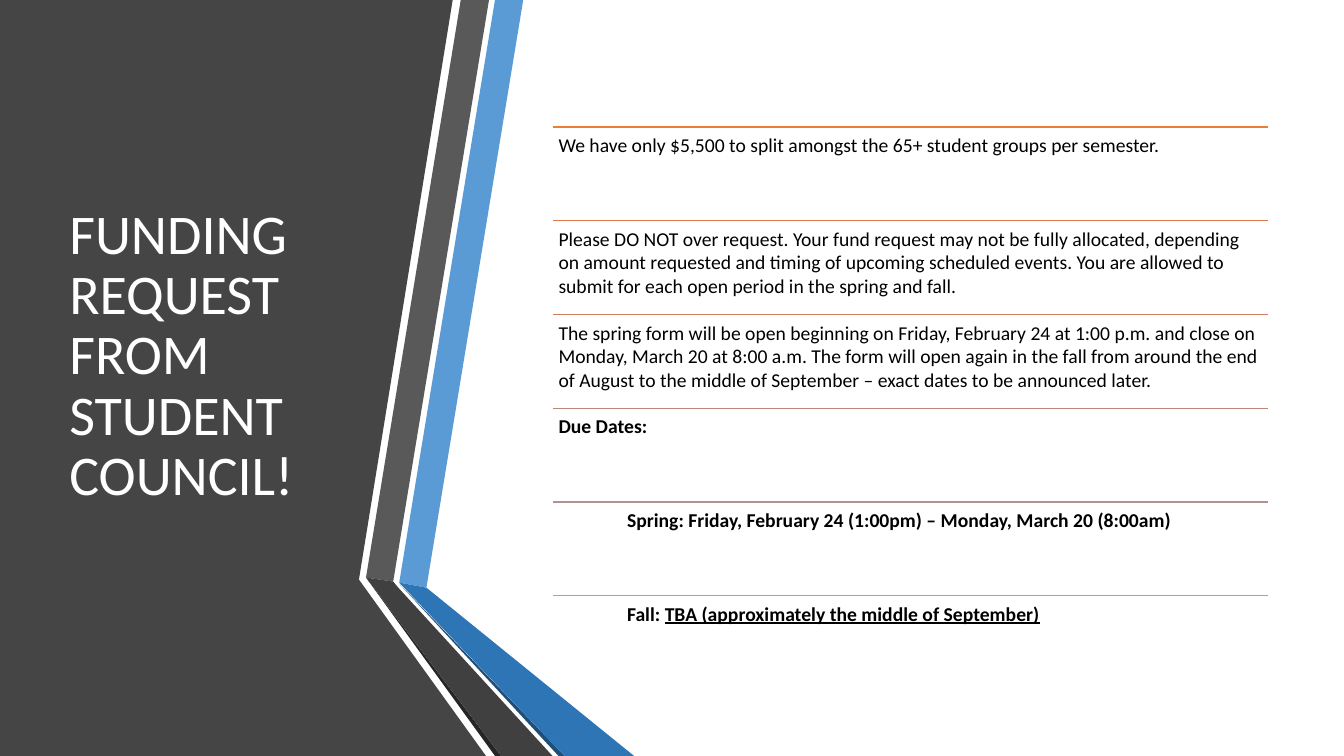
"""Build the student council funding request slide."""
from dataclasses import dataclass

from lxml import etree
from pptx import Presentation
from pptx.dml.color import RGBColor
from pptx.enum.shapes import MSO_CONNECTOR
from pptx.enum.text import MSO_ANCHOR
from pptx.oxml.ns import qn
from pptx.slide import Slide
from pptx.util import Inches, Pt

STRAIGHT = MSO_CONNECTOR.STRAIGHT
TOP, MIDDLE = MSO_ANCHOR.TOP, MSO_ANCHOR.MIDDLE

FONT = "Calibri"
COLORS = {
    "panel": "454545",
    "blue": "5B9BD5",
    "blue_fold": "2E75B6",
    "blue_shade": "1F4E79",
    "gray": "595959",
    "gray_fold": "404040",
    "gray_shade": "262626",
    "title": "FFFFFF",
    "body": "000000",
}
ROW_LEFT, ROW_TOP, ROW_WIDTH, ROW_HEIGHT = 5.48, 1.26, 7.1, 0.93
TAB_STOP = 0.68


@dataclass(frozen=True)
class Band:
    color: str
    points: tuple[tuple[float, float], ...]


@dataclass(frozen=True)
class Phrase:
    text: str
    bold: bool = False
    underline: bool = False


@dataclass(frozen=True)
class Row:
    rule_color: str
    phrases: tuple[Phrase, ...]


BANDS = (
    Band("panel", ((0, 0), (4.49, 0), (3.56, 5.75), (4.82, 7.5), (0, 7.5))),
    Band("blue", ((3.96, 5.78), (4.23, 5.83), (5.19, 0), (4.91, 0))),
    Band("gray", ((4.85, 0), (4.57, 0), (3.63, 5.73), (3.9, 5.77))),
    Band("gray_shade", ((3.63, 5.73), (4.91, 7.5), (4.97, 7.5))),
    Band("blue_shade", ((3.96, 5.79), (5.54, 7.5), (5.6, 7.5))),
    Band("blue_fold", ((3.96, 5.78), (5.6, 7.5), (6.29, 7.5), (4.23, 5.83))),
    Band("gray_fold", ((5.48, 7.5), (3.95, 5.83), (3.9, 5.77), (3.63, 5.73), (4.97, 7.5))),
)

ROWS = (
    Row("ED7D31", (Phrase(
        "We have only $5,500 to split amongst the 65+ student groups per semester."),)),
    Row("DC7A4B", (Phrase(
        "Please DO NOT over request. Your fund request may not be fully allocated, "
        "depending on amount requested and timing of upcoming scheduled events. "
        "You are allowed to submit for each open period in the spring and fall."),)),
    Row("CC7D64", (Phrase(
        "The spring form will be open beginning on Friday, February 24 at 1:00 p.m. "
        "and close on Monday, March 20 at 8:00 a.m. The form will open again in the "
        "fall from around the end of August to the middle of September – exact dates "
        "to be announced later."),)),
    Row("BD867B", (Phrase("Due Dates:", bold=True),)),
    Row("B09391", (Phrase(
        "\tSpring: Friday, February 24 (1:00pm) – Monday, March 20 (8:00am)", bold=True),)),
    Row("A5A5A5", (
        Phrase("\tFall: ", bold=True),
        Phrase("TBA (approximately the middle of September)", bold=True, underline=True))),
)


def add_band(slide: Slide, band: Band) -> None:
    start, *rest = [(Inches(x), Inches(y)) for x, y in band.points]
    builder = slide.shapes.build_freeform(*start)
    builder.add_line_segments(rest, close=True)
    outline = builder.convert_to_shape()
    outline.shadow.inherit = False
    outline.fill.solid()
    outline.fill.fore_color.rgb = RGBColor.from_string(COLORS[band.color])
    outline.line.fill.background()


def add_text(slide: Slide, phrases: tuple[Phrase, ...], *, left: float, top: float,
             width: float, height: float, size: float, color: str,
             inset_x: float = 0.06, inset_y: float = 0.06,
             anchor: MSO_ANCHOR = TOP, line_spacing: float = 1.0) -> None:
    box = slide.shapes.add_textbox(Inches(left), Inches(top), Inches(width), Inches(height))
    frame = box.text_frame
    frame.word_wrap = True
    frame.vertical_anchor = anchor
    frame.margin_left = frame.margin_right = Inches(inset_x)
    frame.margin_top = frame.margin_bottom = Inches(inset_y)
    paragraph = frame.paragraphs[0]
    paragraph.line_spacing = line_spacing
    if phrases[0].text.startswith("\t"):
        tabs = etree.SubElement(paragraph._p.get_or_add_pPr(), qn("a:tabLst"))
        etree.SubElement(tabs, qn("a:tab"), pos=str(Inches(TAB_STOP)), algn="l")
    for phrase in phrases:
        run = paragraph.add_run()
        run.text = phrase.text
        run.font.name = FONT
        run.font.size = Pt(size)
        run.font.bold = phrase.bold
        run.font.underline = phrase.underline
        run.font.color.rgb = RGBColor.from_string(COLORS[color])


def add_rule(slide: Slide, top: float, color: str) -> None:
    rule = slide.shapes.add_connector(
        STRAIGHT, Inches(ROW_LEFT), Inches(top), Inches(ROW_LEFT + ROW_WIDTH), Inches(top))
    rule.line.color.rgb = RGBColor.from_string(color)
    rule.line.width = Pt(1)
    etree.SubElement(rule._element.spPr, qn("a:effectLst"))


def main() -> None:
    deck = Presentation()
    deck.slide_width, deck.slide_height = Inches(13.33), Inches(7.5)
    slide = deck.slides.add_slide(deck.slide_layouts[6])
    for band in BANDS:
        add_band(slide, band)
    add_text(slide, (Phrase("FUNDING REQUEST FROM STUDENT COUNCIL!"),),
             left=0.59, top=0.75, width=3.04, height=5.58, size=40, color="title",
             inset_x=0.1, inset_y=0.05, anchor=MIDDLE, line_spacing=0.9)
    for index, row in enumerate(ROWS):
        top = ROW_TOP + index * ROW_HEIGHT
        add_rule(slide, top, row.rule_color)
        add_text(slide, row.phrases, left=ROW_LEFT, top=top, width=ROW_WIDTH,
                 height=ROW_HEIGHT, size=14, color="body")
    deck.save("out.pptx")


if __name__ == "__main__":
    main()
